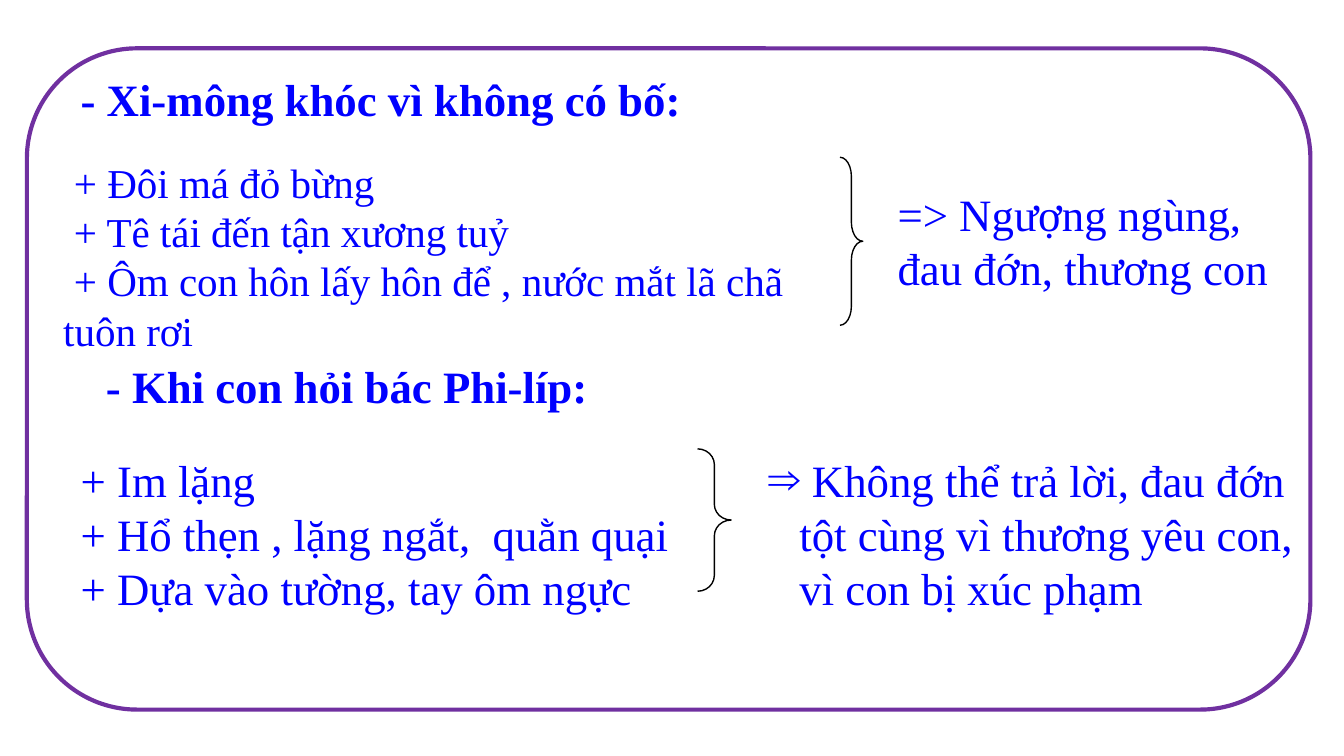
from dataclasses import dataclass

from lxml.etree import SubElement
from pptx import Presentation
from pptx.dml.color import RGBColor
from pptx.enum.shapes import MSO_SHAPE as Preset
from pptx.enum.text import MSO_ANCHOR as Anchor, MSO_AUTO_SIZE as AutoSize, PP_ALIGN as Align
from pptx.oxml.ns import qn
from pptx.util import Inches, Pt


@dataclass(frozen=True)
class Theme:
    """Colours, font and sizes of the slide."""
    text: RGBColor = RGBColor(0x00, 0x00, 0xFF)
    frame: RGBColor = RGBColor(0x70, 0x30, 0xA0)
    brace: RGBColor = RGBColor(0x00, 0x00, 0x00)
    font: str = "Times New Roman"
    size: int = 24
    compact_size: int = 22
    frame_width: float = 2.25
    brace_width: float = 0.75


THEME = Theme()


def place(part, box):
    """Move a part to a box of left, top, width and height in inches."""
    part.left, part.top, part.width, part.height = map(Inches, box)


def write(part, box, *lines, size=THEME.size, bold=False, align=Align.LEFT,
          anchor=Anchor.TOP, wrap=True, margin=0, indent=0, bullet=None):
    """Place a part and fill it with one formatted paragraph per line."""
    place(part, box)
    frame = part.text_frame
    frame.word_wrap = wrap
    frame.auto_size = AutoSize.SHAPE_TO_FIT_TEXT
    frame.vertical_anchor = anchor
    for number, line in enumerate(lines):
        paragraph = frame.add_paragraph() if number else frame.paragraphs[0]
        paragraph.alignment = align
        paragraph.line_spacing = 1.0
        paragraph.space_before = paragraph.space_after = Pt(0)
        properties = paragraph._p.get_or_add_pPr()
        properties.set("marL", str(Inches(margin)))
        properties.set("indent", str(Inches(indent)))
        if bullet:
            SubElement(properties, qn("a:buFont"), typeface=THEME.font)
            SubElement(properties, qn("a:buChar"), char=bullet)
        else:
            SubElement(properties, qn("a:buNone"))
        run = paragraph.add_run()
        run.text = line
        run.font.name = THEME.font
        run.font.size = Pt(size)
        run.font.bold = bold
        run.font.color.rgb = THEME.text


def add_outline(slide, preset, box, color, width, adjustments=()):
    """Draw an unfilled preset shape."""
    outline = slide.shapes.add_shape(preset, *map(Inches, box))
    outline.shadow.inherit = False
    outline.fill.background()
    outline.line.color.rgb = color
    outline.line.width = Pt(width)
    for number, value in enumerate(adjustments):
        outline.adjustments[number] = value


def add_textbox(slide):
    """Add an empty text box to be placed when written."""
    return slide.shapes.add_textbox(0, 0, 0, 0)


def add_brace(slide, box, curve):
    """Draw the brace that joins the details to their conclusion."""
    add_outline(slide, Preset.RIGHT_BRACE, box, THEME.brace, THEME.brace_width, (curve, 0.5))


def build_crying(slide, details, box):
    """Build the section on Xi-mông crying."""
    left, top, width, height = box
    write(slide.shapes.title, (left + 0.13, top, 4.71, 0.5),
          "- Xi-mông khóc vì không có bố:", bold=True, wrap=False)
    write(details, (left, top + 0.64, 5.58, height - 0.64),
          "+ Đôi má đỏ bừng", "+ Tê tái đến tận xương tuỷ",
          "+ Ôm con hôn lấy hôn để , nước mắt lã chã tuôn rơi",
          size=THEME.compact_size, indent=0.08)
    add_brace(slide, (left + 5.88, top + 0.69, 0.17, 1.25), 0.83)
    write(add_textbox(slide), (left + width - 2.98, top + 0.86, 2.98, 0.91),
          "=> Ngượng ngùng,", "đau đớn, thương con", wrap=False)


def build_question(slide, details, box):
    """Build the section on the question to Phi-líp."""
    left, top, width, height = box
    write(add_textbox(slide), (left + 0.17, top, 3.82, 0.5),
          "- Khi con hỏi bác Phi-líp:", bold=True, align=Align.CENTER, anchor=Anchor.MIDDLE)
    write(details, (left, top + 0.7, 4.81, height - 0.7),
          "+ Im lặng", "+ Hổ thẹn , lặng ngắt,  quằn quại", "+ Dựa vào tường, tay ôm ngực")
    add_brace(slide, (left + 4.69, top + 0.72, 0.25, 1.06), 0.47)
    write(add_textbox(slide), (left + width - 4.13, top + 0.7, 4.13, height - 0.7),
          " Không thể trả lời, đau đớn tột cùng vì thương yêu con, vì con bị xúc phạm",
          margin=0.23, indent=-0.23, bullet="⇒")


def main():
    """Build and save the presentation."""
    deck = Presentation()
    deck.slide_width = Inches(10)
    deck.slide_height = deck.slide_width * 9 // 16
    slide = deck.slides.add_slide(deck.slide_layouts.get_by_name("Two Content"))
    _, crying_details, question_details = slide.placeholders
    build_crying(slide, crying_details, (0.37, 0.48, 9.19, 2.22))
    build_question(slide, question_details, (0.5, 2.62, 9.25, 2.01))
    add_outline(slide, Preset.ROUNDED_RECTANGLE, (0.2, 0.36, 9.55, 4.92),
                THEME.frame, THEME.frame_width)
    deck.save("out.pptx")


if __name__ == "__main__":
    main()
